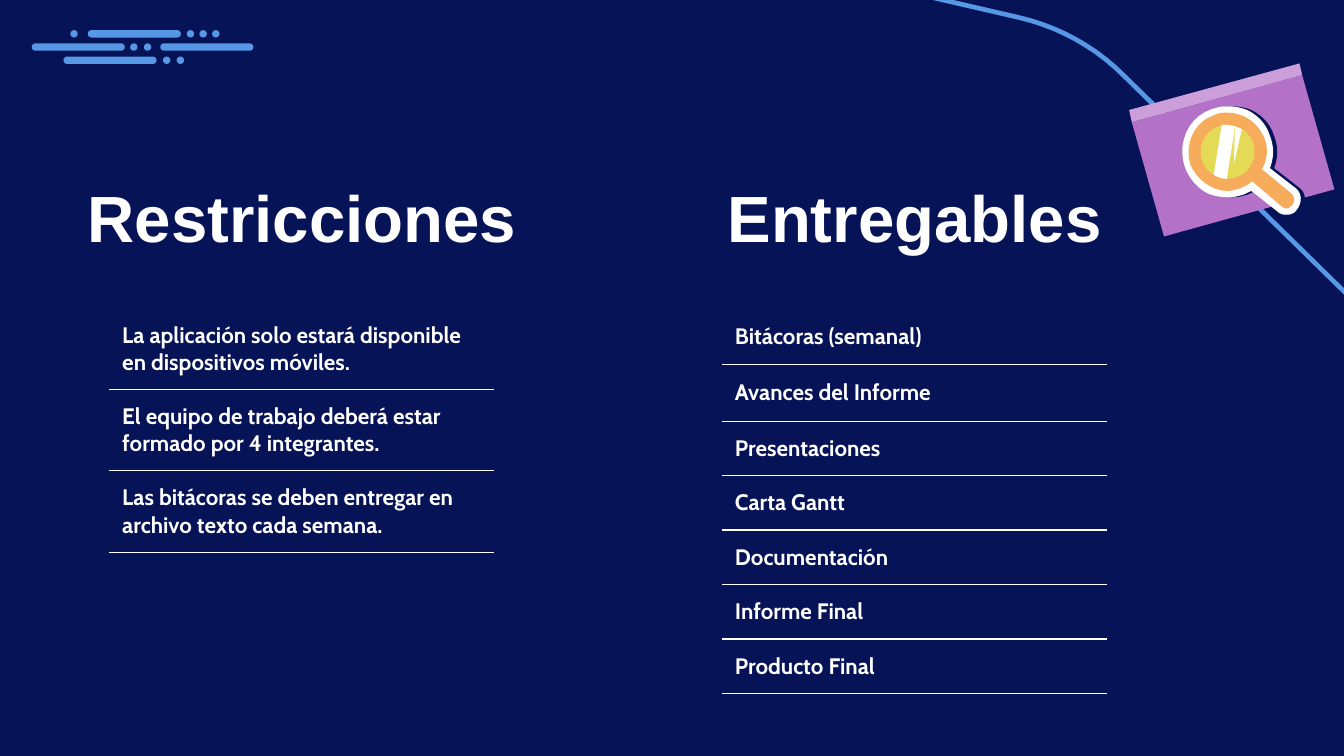
from lxml.etree import SubElement
from pptx import Presentation
from pptx.dml.color import RGBColor
from pptx.enum.shapes import MSO_SHAPE
from pptx.enum.text import MSO_ANCHOR, PP_ALIGN
from pptx.oxml.ns import qn
from pptx.util import Cm, Pt

COLORS = {
    "night": "061357", "white": "FFFFFF", "blue": "5698E6", "purple": "B372C8",
    "lilac": "CC9FDA", "orange": "F7AC5C", "yellow": "E5DA56",
}
INSET = Cm(0.25)
CURVE_STEPS = 10

RESTRICTIONS = [
    "La aplicación solo estará disponible en dispositivos móviles.",
    "El equipo de trabajo deberá estar formado por 4 integrantes.",
    "Las bitácoras se deben entregar en archivo texto cada semana.",
]
DELIVERABLES = [
    "Bitácoras (semanal)", "Avances del Informe", "Presentaciones", "Carta Gantt",
    "Documentación", "Informe Final", "Producto Final",
]

# Outlines in cm: a pair is a straight step, six numbers are a Bézier step.
ROUTE = [
    (26.31, 6.4), (21.23, 1.42), (20.7, 0.89, 20.02, 0.51, 19.25, 0.33), (11.89, -1.37),
]
WINDOW = [(24.61, 1.42), (21.39, 2.31), (22, 4.47), (25.22, 3.58)]
WINDOW_BAR = [(24.56, 1.2), (21.34, 2.08), (21.39, 2.31), (24.61, 1.42)]
GLASS_RIM = [
    (23.19, 2.01),
    (23.09, 2.01, 23.01, 2.03, 22.91, 2.06), (22.45, 2.21, 22.23, 2.72, 22.4, 3.18),
    (22.48, 3.38, 22.63, 3.56, 22.83, 3.66), (22.96, 3.71, 23.09, 3.73, 23.22, 3.73),
    (23.32, 3.73, 23.39, 3.71, 23.5, 3.68), (23.55, 3.66, 23.6, 3.63, 23.65, 3.61),
    (24.13, 3.99), (24.18, 4.04, 24.23, 4.06, 24.31, 4.06),
    (24.33, 4.06), (24.41, 4.06, 24.49, 4.01, 24.51, 3.96),
    (24.61, 3.84, 24.61, 3.66, 24.49, 3.56), (24, 3.18),
    (24.08, 2.97, 24.08, 2.77, 24, 2.57), (23.93, 2.34, 23.77, 2.18, 23.57, 2.08),
    (23.44, 2.03, 23.32, 2.01, 23.19, 2.01),
]
GLASS_BODY = [
    (23.19, 2.13),
    (23.11, 2.13, 23.04, 2.13, 22.94, 2.18), (22.56, 2.31, 22.38, 2.74, 22.5, 3.12),
    (22.63, 3.4, 22.91, 3.61, 23.19, 3.61), (23.29, 3.61, 23.37, 3.58, 23.44, 3.56),
    (23.52, 3.53, 23.6, 3.48, 23.67, 3.43), (24.21, 3.89),
    (24.23, 3.91, 24.28, 3.94, 24.31, 3.94), (24.36, 3.94, 24.38, 3.91, 24.41, 3.89),
    (24.49, 3.81, 24.46, 3.71, 24.41, 3.66), (23.85, 3.2),
    (23.95, 3.02, 23.98, 2.82, 23.9, 2.62), (23.77, 2.31, 23.5, 2.13, 23.19, 2.13),
]
WIDE_GLINT = [
    (23.22, 2.36), (23.09, 2.36), (22.94, 3.3), (23.01, 3.35, 23.09, 3.38, 23.19, 3.38),
    (23.22, 3.12, 23.32, 2.59, 23.34, 2.39),
]
THIN_GLINT = [(23.34, 2.39), (23.32, 3.1), (23.47, 2.44)]

# Left edges of the dots and bars in each row of the corner ornament.
ORNAMENT_ROWS = [
    ([1.33, 3.53, 3.77, 4.01], [1.66]),
    ([2.46, 2.72], [0.6, 3.03]),
    ([3.08, 3.34], [1.2]),
]


def rgb(name):
    return RGBColor.from_string(COLORS[name])


def write(frame, text, *, size, font, color="white", bold=True, align=PP_ALIGN.LEFT):
    paragraph = frame.paragraphs[0]
    paragraph.alignment = align
    run = paragraph.add_run()
    run.text = text
    run.font.size, run.font.name, run.font.bold = Pt(size), font, bold
    run.font.color.rgb = rgb(color)


def flatten(steps):
    """Turn straight and Bézier steps into a list of points."""
    points = [steps[0]]
    for step in steps[1:]:
        if len(step) == 2:
            points.append(step)
            continue
        start, controls = points[-1], (step[:2], step[2:4], step[4:])
        for i in range(1, CURVE_STEPS + 1):
            t = i / CURVE_STEPS
            u = 1 - t
            weights = (u**3, 3 * u * u * t, 3 * u * t * t, t**3)
            points.append(tuple(
                sum(w * p[axis] for w, p in zip(weights, (start, *controls)))
                for axis in (0, 1)
            ))
    return [(Cm(x), Cm(y)) for x, y in points]


class SlideBuilder:
    heading_font, body_font = "Arial", "Cabin"

    def __init__(self, slide):
        self.slide = slide
        slide.background.fill.solid()
        slide.background.fill.fore_color.rgb = rgb("night")

    def paint(self, shape, color):
        shape.shadow.inherit = False
        shape.fill.solid()
        shape.fill.fore_color.rgb = rgb(color)
        shape.line.fill.background()
        return shape

    def heading(self, text, left, top, width, height):
        box = self.slide.shapes.add_textbox(Cm(left), Cm(top), Cm(width), Cm(height))
        frame = box.text_frame
        frame.word_wrap = True
        frame.vertical_anchor = MSO_ANCHOR.MIDDLE
        frame.margin_left = frame.margin_right = INSET
        frame.margin_top = frame.margin_bottom = INSET
        write(frame, text, size=35, font=self.heading_font, align=PP_ALIGN.CENTER)

    def preset(self, kind, color, left, top, width, height):
        shape = self.slide.shapes.add_shape(kind, Cm(left), Cm(top), Cm(width), Cm(height))
        return self.paint(shape, color)

    def freeform(self, steps, close):
        start, *rest = flatten(steps)
        builder = self.slide.shapes.build_freeform(*start)
        builder.add_line_segments(rest, close=close)
        return builder.convert_to_shape()

    def outline(self, steps, color):
        return self.paint(self.freeform(steps, close=True), color)

    def route(self, steps, color, width):
        shape = self.freeform(steps, close=False)
        shape.shadow.inherit = False
        shape.fill.background()
        shape.line.color.rgb = rgb(color)
        shape.line.width = Pt(width)

    def side_shadow(self, shape, color, distance):
        effects = shape._element.spPr.find(qn("a:effectLst"))
        shadow = SubElement(effects, qn("a:outerShdw"), dist=str(Pt(distance)), dir="0",
                            algn="bl", rotWithShape="0")
        SubElement(shadow, qn("a:srgbClr"), val=COLORS[color])

    def cell_border(self, cell, side, visible):
        line = SubElement(cell._tc.get_or_add_tcPr(), qn(f"a:ln{side}"), w=str(Pt(0.75)))
        if visible:
            fill = SubElement(line, qn("a:solidFill"))
            SubElement(fill, qn("a:srgbClr"), val=COLORS["white"])
        else:
            SubElement(line, qn("a:noFill"))

    def ruled_list(self, entries, left, top, width, heights):
        """One-column table with a rule below each entry."""
        table = self.slide.shapes.add_table(
            len(entries), 1, Cm(left), Cm(top), Cm(width), Cm(sum(heights))).table
        table.first_row = table.horz_banding = False
        for index, (entry, height) in enumerate(zip(entries, heights)):
            table.rows[index].height = Cm(height)
            cell = table.cell(index, 0)
            cell.vertical_anchor = MSO_ANCHOR.MIDDLE
            cell.margin_left = cell.margin_right = INSET
            cell.margin_top = cell.margin_bottom = INSET
            for side, visible in (("L", False), ("R", False), ("T", index > 0), ("B", True)):
                self.cell_border(cell, side, visible)
            cell.fill.background()
            write(cell.text_frame, entry, size=12, font=self.body_font)

    def ornament(self, rows, top, pitch, thickness, bar_width):
        for index, (dots, bars) in enumerate(rows):
            y = top + index * pitch
            for x in dots:
                self.preset(MSO_SHAPE.OVAL, "blue", x, y, thickness, thickness)
            for x in bars:
                bar = self.preset(MSO_SHAPE.ROUNDED_RECTANGLE, "blue", x, y, bar_width, thickness)
                bar.adjustments[0] = 0.5


def main():
    deck = Presentation()
    deck.slide_width, deck.slide_height = Cm(25.4), Cm(14.29)
    page = SlideBuilder(deck.slides.add_slide(deck.slide_layouts[6]))

    page.heading("Restricciones", 0.2, 3.3, 11.02, 1.6)
    page.ruled_list(RESTRICTIONS, 2.06, 5.82, 7.28, [1.54] * 3)

    page.route(ROUTE, "blue", 2.5)
    page.outline(WINDOW, "purple")
    page.outline(WINDOW_BAR, "lilac")
    page.side_shadow(page.outline(GLASS_RIM, "white"), "night", 2.2)
    page.outline(GLASS_BODY, "orange")
    page.preset(MSO_SHAPE.OVAL, "yellow", 22.69, 2.36, 1.02, 1.02)
    page.outline(WIDE_GLINT, "white")
    page.outline(THIN_GLINT, "white")
    page.ornament(ORNAMENT_ROWS, top=0.57, pitch=0.25, thickness=0.14, bar_width=1.76)

    page.heading("Entregables", 11.89, 3.3, 10.8, 1.6)
    page.ruled_list(DELIVERABLES, 13.64, 5.82, 7.28, [1.07] * 2 + [1.03] * 5)
    deck.save("out.pptx")


if __name__ == "__main__":
    main()
